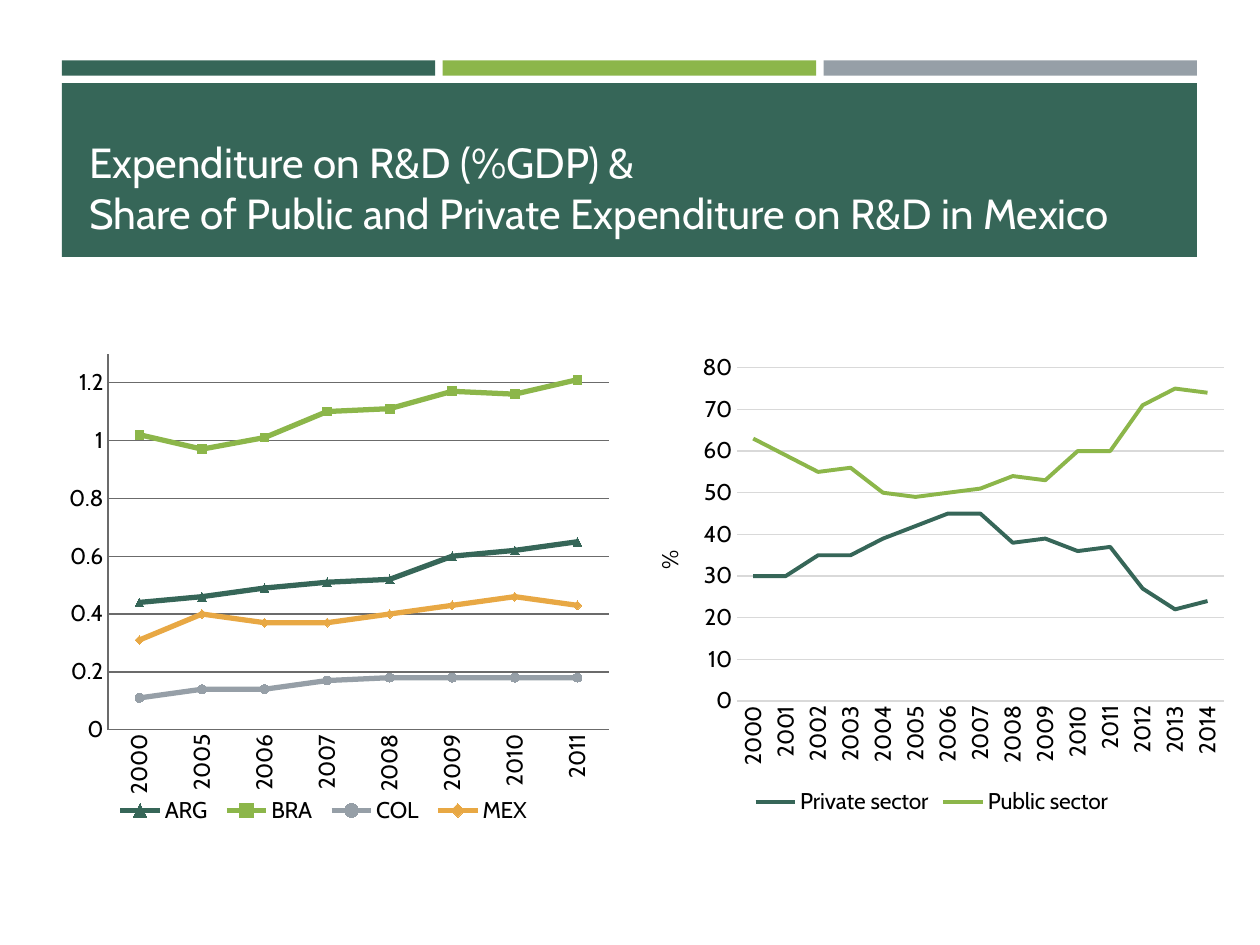
from lxml import etree
from pptx import Presentation
from pptx import util as u
from pptx.chart.data import CategoryChartData
from pptx.dml.color import RGBColor
from pptx.enum import chart as ch
from pptx.enum import shapes, text
from pptx.oxml.ns import qn

GREEN, LIME, GREY, ORANGE = "366658", "8CB64A", "969FA7", "E8A844"
WHITE, BLACK, PALE, DARK = "FFFFFF", "000000", "D9D9D9", "6B6B6B"


def rgb(value):
    return RGBColor.from_string(value)


def set_font(font, size, color, name="Cabin"):
    font.name, font.size, font.bold = name, u.Pt(size), False
    font.color.rgb = rgb(color)


def write(tf, content, size=13, color=BLACK, anchor=None):
    """Fill the first paragraph, with a line break at each newline."""
    if anchor is not None:
        tf.word_wrap, tf.vertical_anchor = True, anchor
    p = tf.paragraphs[0]
    for i, line in enumerate(content.split("\n")):
        if i:
            p.add_line_break()
        r = p.add_run()
        r.text = line
        set_font(r.font, size, color)


def place(parent, index, box, inner=False):
    """Give a plot area or a legend a manual layout, in shares of the chart."""
    for old in parent.findall(qn("c:layout")):
        parent.remove(old)
    layout = etree.Element(qn("c:layout"))
    manual = etree.SubElement(layout, qn("c:manualLayout"))
    items = [("layoutTarget", "inner")] if inner else []
    items += [("xMode", "edge"), ("yMode", "edge")]
    items += zip("xywh", map(str, box))
    for tag, val in items:
        etree.SubElement(manual, qn("c:" + tag)).set("val", val)
    parent.insert(index, layout)


def style_line(line, color, width):
    line.color.rgb, line.width = rgb(color), u.Pt(width)


def turn_up(body):
    body.set("rot", "-5400000")
    body.set("vert", "horz")


class Deck:
    def __init__(self):
        self.prs = Presentation()
        self.prs.slide_width, self.prs.slide_height = u.Inches(10), u.Inches(7.5)
        self.s = self.prs.slides.add_slide(self.prs.slide_layouts[5])

    def box(self, x, y, w, h):
        """Turn shares of the slide's size into lengths."""
        width, height = self.prs.slide_width, self.prs.slide_height
        return int(x * width), int(y * height), int(w * width), int(h * height)

    def bar(self, *share, color):
        sp = self.s.shapes.add_shape(shapes.MSO_SHAPE.RECTANGLE, *self.box(*share))
        sp.shadow.inherit = False
        sp.fill.solid()
        sp.fill.fore_color.rgb = rgb(color)
        sp.line.fill.background()

    def title(self, *share, content):
        sp = self.s.shapes.title
        sp.left, sp.top, sp.width, sp.height = self.box(*share)
        write(sp.text_frame, content, 24, WHITE, text.MSO_ANCHOR.BOTTOM)
        sp.text_frame.paragraphs[0].alignment = text.PP_ALIGN.LEFT
        self.s.shapes._spTree.append(sp._element)  # in front of the band

    def line_chart(self, *share, cats, series, top, step, plot, grid, width,
                   legend=None, markers=None, unit=None, axis_lines=(PALE, None)):
        """series holds (name, colour, values); axis_lines is category, value."""
        data = CategoryChartData()
        data.categories = cats
        for name, _, vals in series:
            data.add_series(name, vals)
        kind = ch.XL_CHART_TYPE.LINE_MARKERS if markers else ch.XL_CHART_TYPE.LINE
        chart = self.s.shapes.add_chart(kind, *self.box(*share), data).chart
        set_font(chart.font, 13, BLACK)
        chart.has_title = False
        chart.has_legend = True
        chart.legend.position = ch.XL_LEGEND_POSITION.BOTTOM
        chart.legend.include_in_layout = False
        set_font(chart.legend.font, 13, BLACK)
        if legend:
            place(chart.legend._element, 1, legend)
        place(chart._chartSpace.chart.plotArea, 0, plot, inner=True)

        cat, val = chart.category_axis, chart.value_axis
        for axis, color in zip((cat, val), axis_lines):
            axis.major_tick_mark = axis.minor_tick_mark = ch.XL_TICK_MARK.NONE
            set_font(axis.tick_labels.font, 13, BLACK)
            if color:
                style_line(axis.format.line, color, 0.75)
            else:
                axis.format.line.fill.background()
        turn_up(cat._element.find(qn("c:txPr")).find(qn("a:bodyPr")))
        val.minimum_scale, val.maximum_scale, val.major_unit = 0, top, step
        val.tick_labels.number_format = "General"
        val.tick_labels.number_format_is_linked = False
        val.has_major_gridlines = True
        style_line(val.major_gridlines.format.line, grid, 0.75)
        if unit:
            tf = val.axis_title.text_frame
            write(tf, unit)
            turn_up(tf._txBody.find(qn("a:bodyPr")))

        for i, (ser, (_, color, _)) in enumerate(zip(chart.plots[0].series, series)):
            ser.smooth = False
            style_line(ser.format.line, color, width)
            if markers:
                ser.marker.style, ser.marker.size = markers[i], 5
                ser.marker.format.fill.solid()
                ser.marker.format.fill.fore_color.rgb = rgb(color)
                style_line(ser.marker.format.line, color, 0.75)


def main():
    deck = Deck()
    left, total, gap = 0.049, 0.901, 0.006
    width = (total - 2 * gap) / 3
    for i, color in enumerate((GREEN, LIME, GREY)):
        deck.bar(left + i * (width + gap), 0.064, width, 0.016, color=color)
    deck.bar(left, 0.088, total, 0.184, color=GREEN)
    deck.title(0.061, 0.101, 0.874, 0.157,
               content="Expenditure on R&D (%GDP) & \n"
                       "Share of Public and Private Expenditure on R&D in Mexico")

    mark = ch.XL_MARKER_STYLE
    deck.line_chart(
        0.035, 0.364, 0.462, 0.517,
        cats=["2000"] + [str(y) for y in range(2005, 2012)],
        series=[
            ("ARG", GREEN, (0.44, 0.46, 0.49, 0.51, 0.52, 0.6, 0.62, 0.65)),
            ("BRA", LIME, (1.02, 0.97, 1.01, 1.1, 1.11, 1.17, 1.16, 1.21)),
            ("COL", GREY, (0.11, 0.14, 0.14, 0.17, 0.18, 0.18, 0.18, 0.18)),
            ("MEX", ORANGE, (0.31, 0.4, 0.37, 0.37, 0.4, 0.43, 0.46, 0.43)),
        ],
        top=1.3, step=0.2, plot=(0.11, 0.02, 0.86, 0.77), grid=DARK, width=3,
        legend=(0.11, 0.92, 0.74, 0.07), axis_lines=(DARK, DARK),
        markers=(mark.TRIANGLE, mark.SQUARE, mark.CIRCLE, mark.DIAMOND))
    deck.line_chart(
        0.498, 0.364, 0.483, 0.504,
        cats=[str(y) for y in range(2000, 2015)],
        series=[
            ("Private sector", GREEN,
             (30, 30, 35, 35, 39, 42, 45, 45, 38, 39, 36, 37, 27, 22, 24)),
            ("Public sector", LIME,
             (63, 59, 55, 56, 50, 49, 50, 51, 54, 53, 60, 60, 71, 75, 74)),
        ],
        top=80, step=10, plot=(0.18, 0.05, 0.8, 0.7), grid=PALE, width=2.25, unit="%")
    deck.prs.save("out.pptx")


if __name__ == "__main__":
    main()
